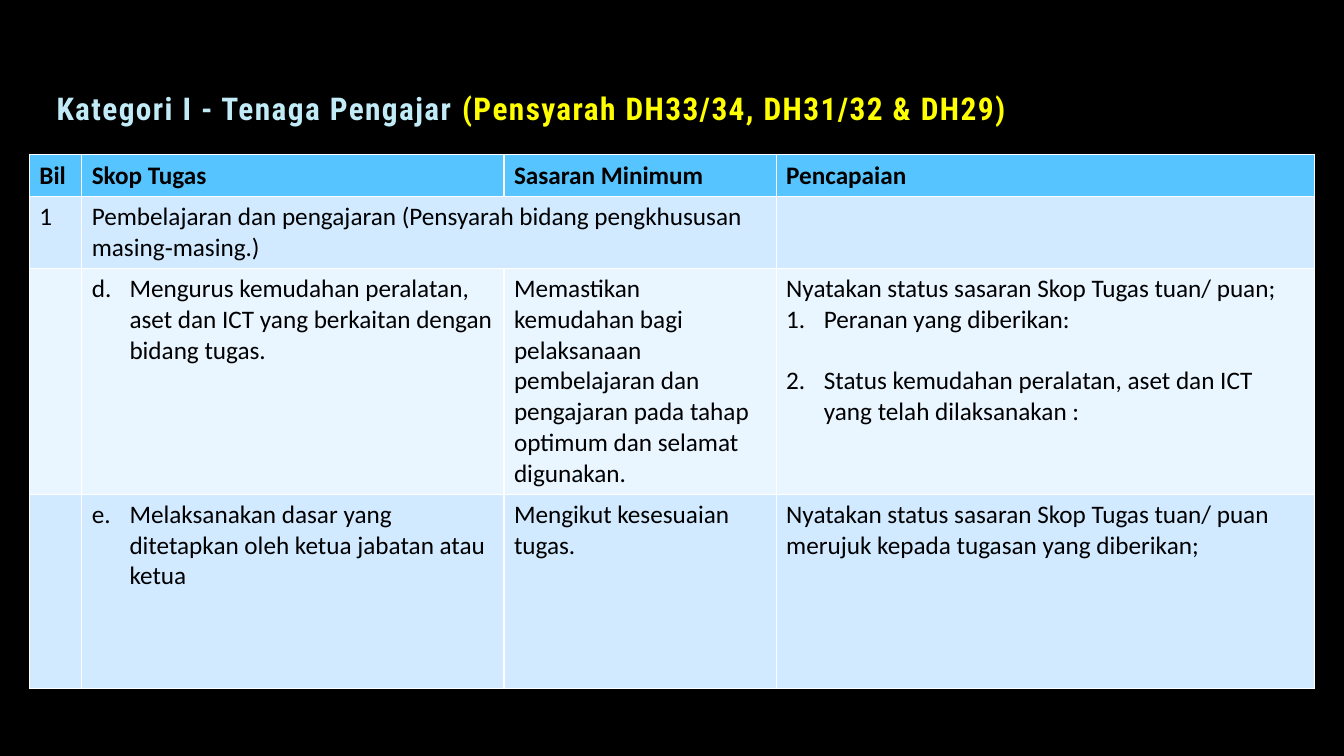
"""Build the job-scope slide for teaching staff, category I."""
from lxml.etree import SubElement
from pptx import Presentation
from pptx.dml.color import RGBColor as RGB
from pptx.enum.text import MSO_ANCHOR as ANCHOR, MSO_AUTO_SIZE as AUTO, PP_ALIGN as ALIGN
from pptx.oxml.ns import qn
from pptx.util import Cm, Pt

TITLE = [
    ("Kategori I - Tenaga Pengajar ", "title"),
    ("(Pensyarah DH33/34, DH31/32 & DH29)", "accent"),
]
LETTER, NUMBER = "alphaLcPeriod", "arabicPeriod"
ROWS = [
    ["Bil", "Skop Tugas", "Sasaran Minimum", "Pencapaian"],
    ["1", "Pembelajaran dan pengajaran (Pensyarah bidang pengkhususan masing‐masing.)", "", ""],
    [
        "",
        [("Mengurus kemudahan peralatan, aset dan ICT yang berkaitan dengan bidang tugas.", LETTER, 4)],
        "Memastikan kemudahan bagi pelaksanaan pembelajaran dan pengajaran "
        "pada tahap optimum dan selamat digunakan.",
        [
            "Nyatakan status sasaran Skop Tugas tuan/ puan;",
            ("Peranan yang diberikan:", NUMBER, 1),
            ("Status kemudahan peralatan, aset dan ICT yang telah dilaksanakan :", NUMBER, 1),
        ],
    ],
    [
        "",
        [("Melaksanakan dasar yang ditetapkan oleh ketua jabatan atau ketua", LETTER, 5)],
        "Mengikut kesesuaian tugas.",
        [
            "Nyatakan status sasaran Skop Tugas tuan/ puan",
            "merujuk kepada tugasan yang diberikan;",
        ],
    ],
]
COL_WIDTHS = [1.32, 10.64, 6.86, 13.56]
ROW_HEIGHTS = [1.07, 1.78, 5.69, 4.9]
INDENT = Cm(0.95)
ITEM_GAP = Pt(22)
COLORS = {
    "back": "000000", "title": "C1EBF7", "accent": "FFFF00", "text": "000000",
    "header": "56C5FF", "odd": "D1EAFF", "even": "E9F5FF",
}


def color(name):
    return RGB.from_string(COLORS[name])


def add_run(p, text, font, size, fill, bold):
    r = p.add_run()
    r.text = text
    r.font.name, r.font.size, r.font.bold = font, Pt(size), bold
    r.font.color.rgb = color(fill)
    return r


def number_item(p, scheme, start):
    pPr = p._p.get_or_add_pPr()
    pPr.set("marL", str(INDENT))
    pPr.set("indent", str(-INDENT))
    num = SubElement(pPr, qn("a:buAutoNum"), type=scheme)
    if start > 1:
        num.set("startAt", str(start))


def fill_cell(cell, content, row):
    cell.fill.solid()
    cell.fill.fore_color.rgb = color("header" if row == 0 else "odd" if row % 2 else "even")
    cell.vertical_anchor = ANCHOR.TOP if row else ANCHOR.MIDDLE
    tf = cell.text_frame
    previous = None
    for i, item in enumerate([content] if isinstance(content, str) else content):
        text, scheme, start = (item, None, 1) if isinstance(item, str) else item
        p = tf.add_paragraph() if i else tf.paragraphs[0]
        if scheme and scheme == previous:
            p.space_before = ITEM_GAP
        if scheme:
            number_item(p, scheme, start)
        if text:
            add_run(p, text, "Calibri", 18, "text", row == 0)
        previous = scheme


def add_title(s):
    sp = s.shapes.title
    sp.left, sp.top, sp.width, sp.height = Cm(1.17), Cm(1.6), Cm(28.88), Cm(1.7)
    tf = sp.text_frame
    tf.auto_size, tf.word_wrap, tf.vertical_anchor = AUTO.NONE, True, ANCHOR.BOTTOM
    p = tf.paragraphs[0]
    p.alignment, p.line_spacing = ALIGN.LEFT, 0.7
    for text, fill in TITLE:
        r = add_run(p, text, "Roboto Condensed", 22.4, fill, True)
        r.font._element.set("spc", "100")


def add_scope_table(s):
    frame = s.shapes.add_table(len(ROWS), len(COL_WIDTHS), Cm(0.74), Cm(3.89),
                               Cm(sum(COL_WIDTHS)), Cm(sum(ROW_HEIGHTS)))
    table = frame.table
    for column, width in zip(table.columns, COL_WIDTHS):
        column.width = Cm(width)
    for row, height in zip(table.rows, ROW_HEIGHTS):
        row.height = Cm(height)
    for i, contents in enumerate(ROWS):
        for j, content in enumerate(contents):
            fill_cell(table.cell(i, j), content, i)
    table.cell(1, 1).merge(table.cell(1, 2))


def main():
    prs = Presentation()
    prs.slide_width, prs.slide_height = Cm(33.87), Cm(19.05)
    s = prs.slides.add_slide(prs.slide_layouts[5])
    s.background.fill.solid()
    s.background.fill.fore_color.rgb = color("back")
    add_title(s)
    add_scope_table(s)
    prs.save("out.pptx")


if __name__ == "__main__":
    main()
